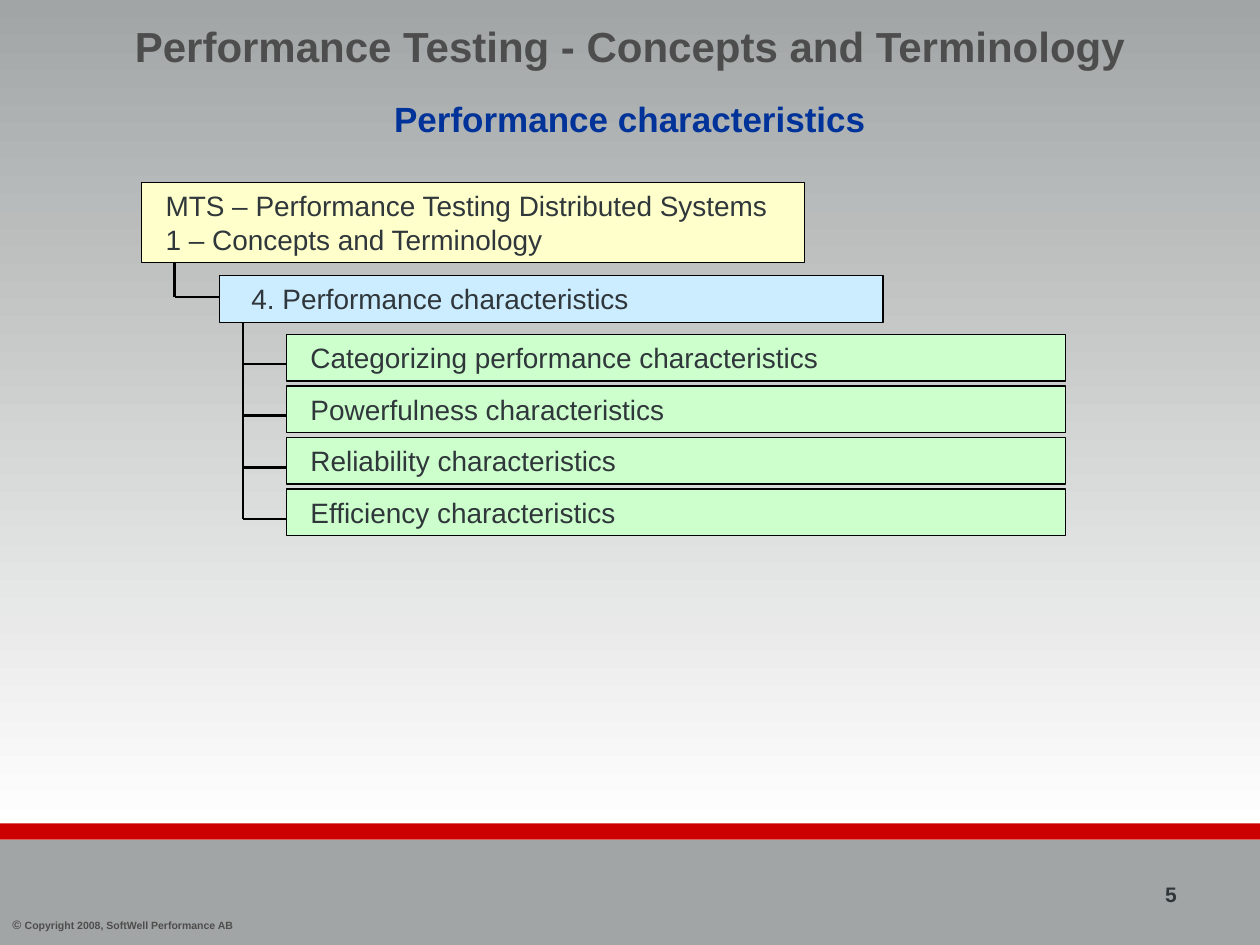
from dataclasses import dataclass

import pptx
import pptx.dml.color
import pptx.enum.shapes
import pptx.enum.text
import pptx.oxml
import pptx.util
from pptx.util import Cm, Pt

ALIGN = pptx.enum.text.PP_ALIGN
ANCHOR = pptx.enum.text.MSO_ANCHOR


@dataclass(frozen=True)
class Theme:
    font: str = "Arial"
    gray: str = "A2A5A5"
    white: str = "FFFFFF"
    red: str = "CC0000"
    heading: str = "4D4D4D"
    subtitle: str = "003399"
    ink: str = "30373B"
    line: str = "000000"
    course: str = "FFFFCC"
    section: str = "CCECFF"
    topic: str = "CCFFCC"
    title_size: float = 24
    subtitle_size: float = 20
    box_size: float = 16
    number_size: float = 12
    symbol_size: float = 7
    copyright_size: float = 6
    outline_width: float = 0.75
    branch_width: float = 1.5


THEME = Theme()


@dataclass(frozen=True)
class Box:
    """A rectangle in centimetres."""
    left: float
    top: float
    width: float
    height: float

    @property
    def bottom(self):
        return self.top + self.height

    def lengths(self):
        return Cm(self.left), Cm(self.top), Cm(self.width), Cm(self.height)


def rgb(color):
    return pptx.dml.color.RGBColor.from_string(color)


def style_font(font, size, color, bold=False):
    font.name = THEME.font
    font.size = Pt(size)
    font.bold = bold
    font.color.rgb = rgb(color)


def add_rectangle(slide, box, color):
    shape = slide.shapes.add_shape(
        pptx.enum.shapes.MSO_SHAPE.RECTANGLE, *box.lengths())
    shape.shadow.inherit = False
    shape.fill.solid()
    shape.fill.fore_color.rgb = rgb(color)
    shape.line.fill.background()
    return shape


def add_label(slide, box, text, size, color, align=ALIGN.LEFT, anchor=ANCHOR.TOP):
    text_frame = slide.shapes.add_textbox(*box.lengths()).text_frame
    text_frame.word_wrap = True
    text_frame.vertical_anchor = anchor
    paragraph = text_frame.paragraphs[0]
    paragraph.text = text
    paragraph.alignment = align
    style_font(paragraph.font, size, color, bold=True)
    return paragraph


def add_branch(slide, start_x, start_y, end_x, end_y):
    connector = slide.shapes.add_connector(
        pptx.enum.shapes.MSO_CONNECTOR.STRAIGHT,
        Cm(start_x), Cm(start_y), Cm(end_x), Cm(end_y))
    connector.line.color.rgb = rgb(THEME.line)
    connector.line.width = Pt(THEME.branch_width)
    properties = connector._element.spPr
    properties.append(pptx.oxml.parse_xml(
        '<a:effectLst xmlns:a="http://schemas.openxmlformats.org/drawingml/2006/main"/>'))


def add_tree_box(slide, box, text, color, inset=0.49):
    shape = add_rectangle(slide, box, color)
    shape.line.color.rgb = rgb(THEME.line)
    shape.line.width = Pt(THEME.outline_width)
    text_frame = shape.text_frame
    text_frame.word_wrap = True
    text_frame.vertical_anchor = ANCHOR.TOP
    text_frame.margin_left = Cm(inset)
    paragraph = text_frame.paragraphs[0]
    paragraph.text = text
    paragraph.alignment = ALIGN.LEFT
    style_font(paragraph.font, THEME.box_size, THEME.ink)


def add_background(slide, box):
    band_top = box.top + 16.6
    footer_top = band_top + 0.33
    backdrop = add_rectangle(
        slide, Box(box.left, box.top, box.width, 16.66), THEME.gray)
    backdrop.fill.gradient()
    backdrop.fill.gradient_angle = 270
    for stop, color in zip(backdrop.fill.gradient_stops, (THEME.gray, THEME.white)):
        stop.color.rgb = rgb(color)
    add_rectangle(slide, Box(box.left, band_top, box.width, 0.33), THEME.red)
    add_rectangle(
        slide, Box(box.left, footer_top, box.width, box.bottom - footer_top), THEME.gray)


def add_header(slide, box):
    title_height = 1.85
    add_label(slide, Box(box.left, box.top, box.width, title_height),
              "Performance Testing - Concepts and Terminology",
              THEME.title_size, THEME.heading, ALIGN.CENTER, ANCHOR.MIDDLE)
    add_label(slide, Box(box.left, box.top + title_height, box.width,
                         box.height - title_height),
              "Performance characteristics",
              THEME.subtitle_size, THEME.subtitle, ALIGN.CENTER)


def add_footer(slide, box):
    paragraph = add_label(slide, Box(box.left, box.top + 0.71, 6.35, 0.56),
                          "© ", THEME.symbol_size, THEME.heading)
    run = paragraph.add_run()
    run.text = "Copyright 2008, SoftWell Performance AB"
    run.font.size = Pt(THEME.copyright_size)
    add_label(slide, Box(box.left + 23.24, box.top, 2.16, 0.76),
              "5", THEME.number_size, THEME.ink)


def add_topic_tree(slide, box, course, section, topics):
    """Draw the course, its section and the section's topics as a stepped tree."""
    course_box = Box(box.left, box.top, 13.37, 1.62)
    section_box = Box(box.left + 1.58, box.top + 1.88, 13.37, 0.94)
    topic_left, topic_top, topic_pitch = box.left + 2.92, box.top + 3.06, 1.04
    topic_width = box.left + box.width - topic_left

    add_tree_box(slide, course_box, course, THEME.course)
    add_tree_box(slide, section_box, section, THEME.section, inset=0.64)
    trunk_x, branch_y = box.left + 0.67, section_box.top + 0.43
    add_branch(slide, trunk_x, course_box.bottom, trunk_x, branch_y)
    add_branch(slide, trunk_x, branch_y, section_box.left, branch_y)

    trunk_x = section_box.left + 0.47
    for index, topic in enumerate(topics):
        topic_box = Box(topic_left, topic_top + index * topic_pitch, topic_width, 0.94)
        branch_y = topic_box.top + 0.6
        add_tree_box(slide, topic_box, topic, THEME.topic)
        add_branch(slide, trunk_x, branch_y, topic_left, branch_y)
    add_branch(slide, trunk_x, section_box.bottom, trunk_x, branch_y)


def main():
    presentation = pptx.Presentation()
    page = Box(0, 0, 25.4, 19.05)
    presentation.slide_width = Cm(page.width)
    presentation.slide_height = Cm(page.height)
    slide = presentation.slides.add_slide(presentation.slide_layouts[6])

    add_background(slide, page)
    add_footer(slide, Box(0, 17.65, page.width, 1.4))
    add_header(slide, Box(0, 0, page.width, 2.95))
    add_topic_tree(
        slide, Box(2.85, 3.68, 18.63, 7.12),
        "MTS – Performance Testing Distributed Systems\v1 – Concepts and Terminology",
        "4. Performance characteristics",
        ["Categorizing performance characteristics",
         "Powerfulness characteristics",
         "Reliability characteristics",
         "Efficiency characteristics"])
    presentation.save("out.pptx")


if __name__ == "__main__":
    main()
